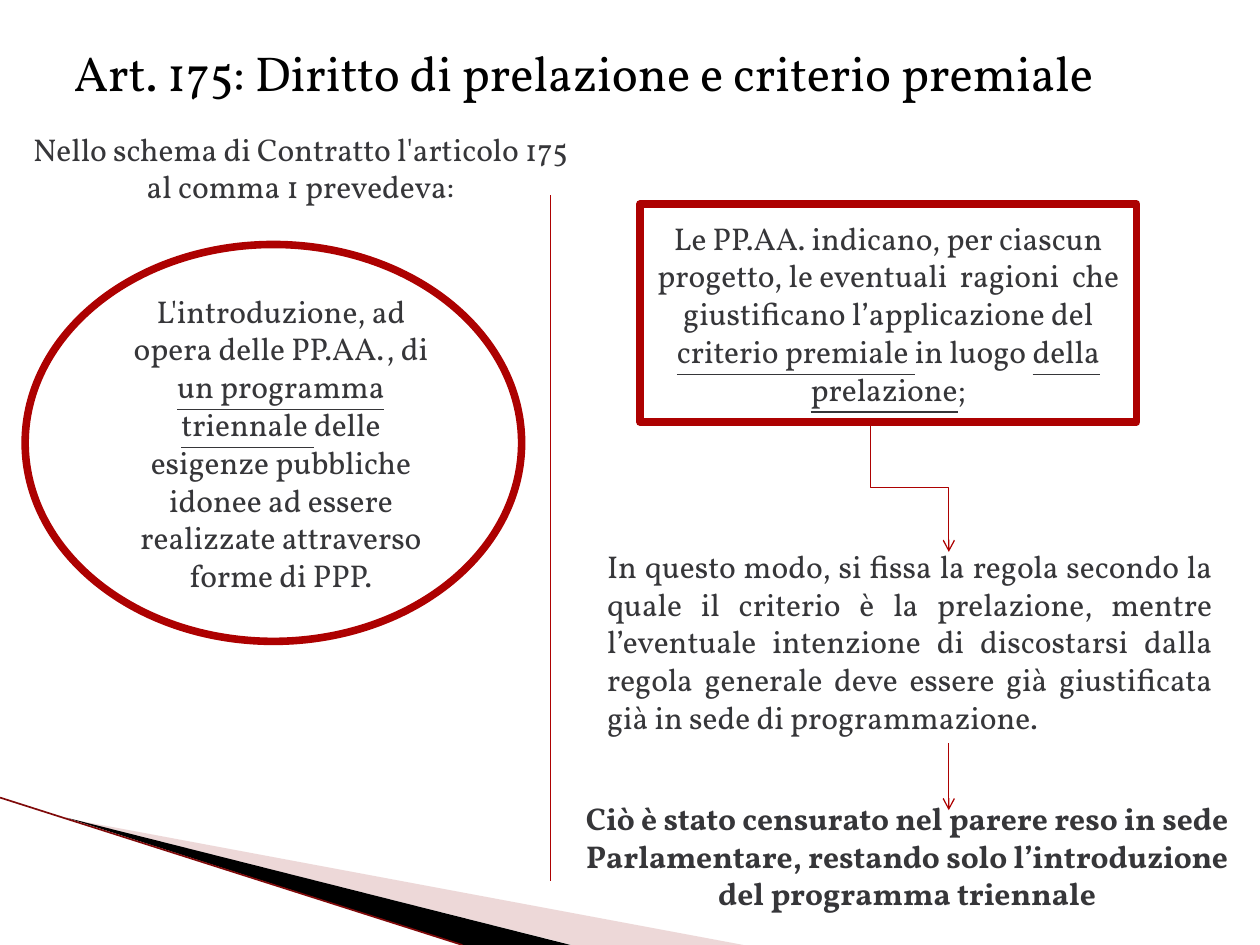
from lxml import etree
from pptx import Presentation
from pptx.dml.color import RGBColor
from pptx.enum.shapes import MSO_CONNECTOR, MSO_SHAPE
from pptx.enum.text import MSO_ANCHOR, PP_ALIGN
from pptx.oxml.ns import qn
from pptx.util import Inches, Pt

ELBOW, STRAIGHT = MSO_CONNECTOR.ELBOW, MSO_CONNECTOR.STRAIGHT
ELLIPSE, RECTANGLE = MSO_SHAPE.OVAL, MSO_SHAPE.RECTANGLE
CENTER, JUSTIFY = PP_ALIGN.CENTER, PP_ALIGN.JUSTIFY
MIDDLE, TOP = MSO_ANCHOR.MIDDLE, MSO_ANCHOR.TOP

COLS, ROWS = 100, 75
WIDTH, HEIGHT = Inches(10), Inches(7.5)
RED, DARK_RED, PINK = "AD0101", "7F0A0A", "D29E9E"
BLACK, WHITE, GREY = "000000", "FFFFFF", "363639"
BODY = {"name": "Vollkorn", "size": Pt(18), "bold": False}
TITLE = BODY | {"size": Pt(28)}
STRONG = BODY | {"bold": True}
INDENT = Inches(0.12)


def color(code):
    return RGBColor.from_string(code)


def grid(*values):
    units = (WIDTH / COLS, HEIGHT / ROWS)
    return [round(v * units[i % 2]) for i, v in enumerate(values)]


def set_attrs(obj, values):
    for name, value in values.items():
        setattr(obj, name, value)


def paint(shape, fill, alpha=None):
    shape.shadow.inherit = False
    shape.fill.solid()
    shape.fill.fore_color.rgb = color(fill)
    if alpha:
        clr = shape.fill._xPr.find(qn("a:solidFill"))[0]
        etree.SubElement(clr, qn("a:alpha")).set("val", str(alpha * 1000))


def stroke(shape, code, width):
    shape.line.color.rgb = color(code)
    shape.line.width = Pt(width)


def write(shape, paragraphs, font=BODY, ink=GREY, align=CENTER, indent=0, **frame):
    tf = shape.text_frame
    set_attrs(tf, {"word_wrap": True, "vertical_anchor": TOP} | frame)
    for i, runs in enumerate(paragraphs):
        p = tf.add_paragraph() if i else tf.paragraphs[0]
        p.alignment = align
        if indent:
            p._p.get_or_add_pPr().set("marL", str(indent))
        for text, underline in runs:
            r = p.add_run()
            r.text = text
            set_attrs(r.font, font | {"underline": underline})
            r.font.color.rgb = color(ink)


def add_text(s, box, lines, **options):
    tb = s.shapes.add_textbox(*grid(*box))
    write(tb, [[(line, False)] for line in lines], **options)


def add_frame(s, kind, box, runs, indent=0):
    sp = s.shapes.add_shape(kind, *grid(*box))
    paint(sp, WHITE)
    stroke(sp, RED, 4.33)
    write(sp, [runs], indent=indent, vertical_anchor=MIDDLE)


def add_wedge(s, points, fill, alpha=None):
    start, *rest = [grid(*point) for point in points]
    fb = s.shapes.build_freeform(*start)
    fb.add_line_segments(rest, close=True)
    sp = fb.convert_to_shape()
    paint(sp, fill, alpha)
    sp.line.fill.background()


def add_line(s, ends, kind=STRAIGHT, code=RED, width=0.75, arrow=False):
    c = s.shapes.add_connector(kind, *grid(*ends))
    stroke(c, code, width)
    if arrow:
        etree.SubElement(c.line._get_or_add_ln(), qn("a:tailEnd")).set("type", "arrow")
    etree.SubElement(c._element.spPr, qn("a:effectLst"))
    return c


def add_down_elbow(s, x1, y1, x2, y2):
    cx, cy = (x1 + x2) / 2, (y1 + y2) / 2
    dx, dy = (y2 - y1) / 2, (x2 - x1) / 2
    c = add_line(s, (cx - dx, cy - dy, cx + dx, cy + dy), ELBOW, arrow=True)
    xfrm = c._element.spPr.find(qn("a:xfrm"))
    xfrm.set("rot", str(270 * 60000))
    xfrm.set("flipH", "1")


def main():
    prs = Presentation()
    prs.slide_width, prs.slide_height = WIDTH, HEIGHT
    s = prs.slides.add_slide(prs.slide_layouts[6])

    add_wedge(s, [(5.5, 65), (59, ROWS), (45.4, ROWS)], PINK, 40)
    add_wedge(s, [(5.3, 64.9), (45.3, ROWS), (36.7, ROWS)], BLACK)
    add_line(s, (0, 63.3, 36.7, ROWS), code=DARK_RED, width=0.95)

    add_frame(s, ELLIPSE, (2, 19.4, 39.4, 31.5), [
        ("L'introduzione, ad opera delle PP.AA., di ", False),
        ("un programma triennale ", True),
        ("delle esigenze pubbliche idonee ad essere realizzate attraverso "
         "forme di PPP.", False),
    ], INDENT)
    add_down_elbow(s, 69.1, 33.6, 75.3, 43.8)
    add_text(s, (3.5, 2.9, 85.6, 5.7),
             ["Art. 175: Diritto di prelazione e criterio premiale"],
             font=TITLE, ink=BLACK, word_wrap=False)
    add_text(s, (0, 9.8, 46.5, 7.1),
             ["Nello schema di Contratto l'articolo 175", "al comma 1 prevedeva:"],
             indent=INDENT, margin_left=0, margin_right=0)
    add_frame(s, RECTANGLE, (50.8, 16.2, 39.4, 17.3), [
        ("Le PP.AA. indicano, per ciascun progetto, le eventuali  ragioni  che "
         "giustificano l’applicazione del ", False),
        ("criterio premiale ", True),
        ("in luogo ", False),
        ("della prelazione", True),
        (";", False),
    ])
    add_text(s, (47.2, 42.9, 50, 16.2),
             ["In questo modo, si fissa la regola secondo la quale il criterio è la "
              "prelazione, mentre l’eventuale intenzione di discostarsi dalla regola "
              "generale deve essere già giustificata già in sede di programmazione."],
             align=JUSTIFY)
    add_text(s, (44.1, 62.9, 55.8, 10.1),
             ["Ciò è stato censurato nel parere reso in sede Parlamentare, restando "
              "solo l’introduzione del programma triennale"], font=STRONG)
    add_line(s, (75.3, 59, 75.3, 64.3), arrow=True)
    add_line(s, (43.7, 15.5, 43.7, 69.9))

    prs.save("out.pptx")


if __name__ == "__main__":
    main()
